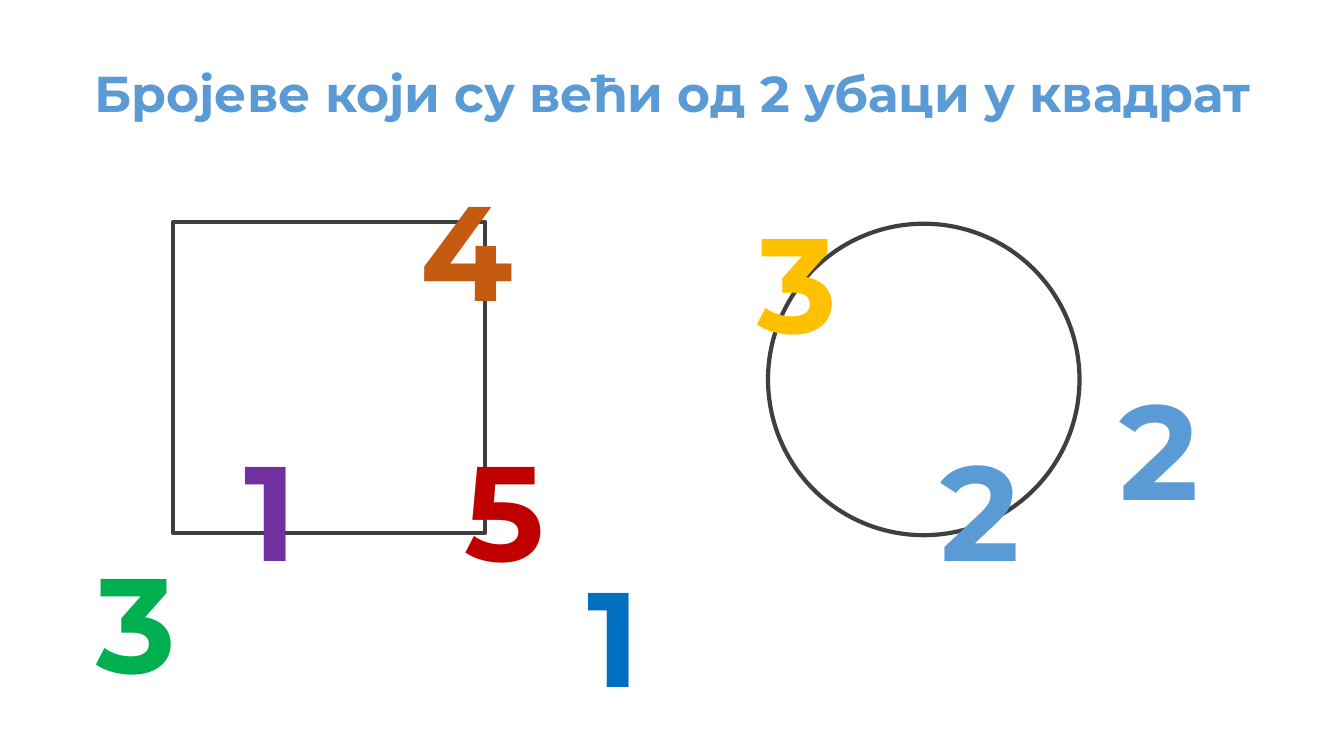
from dataclasses import dataclass

import pptx
import pptx.dml.color
import pptx.enum.shapes
import pptx.enum.text
import pptx.slide
import pptx.util

FONT = "Montserrat"
BLUE = "5B9BD5"
OUTLINE = "3F3F3F"
TARGET_SIZE = 222.5
DIGIT_WIDTH, DIGIT_HEIGHT = 79.2, 123.8
LOWER_ROW = 301.7


@dataclass(frozen=True)
class Target:
    kind: pptx.enum.shapes.MSO_SHAPE
    left: float
    top: float


@dataclass(frozen=True)
class Label:
    text: str
    left: float
    top: float
    color: str
    width: float = DIGIT_WIDTH
    height: float = DIGIT_HEIGHT
    size: float = 96


TARGETS = [
    Target(pptx.enum.shapes.MSO_SHAPE.RECTANGLE, 158.4 - 34.6, 158.4),
    Target(pptx.enum.shapes.MSO_SHAPE.OVAL, 548.6, 159.8),
]

TASK = Label("Бројеве који су већи од 2 убаци у квадрат", 41.8, 41, BLUE, 877, 51.1, 36)

DIGITS = [
    Label("5", 321.1, LOWER_ROW, "C00000"),
    Label("3", 57.6, 381.6, "00B050"),
    Label("2", 788.4, 257.8, BLUE),
    Label("1", 398.9, 391.7, "0070C0"),
    Label("4", 293, 115.9, "C55A11"),
    Label("2", 660.2, LOWER_ROW, BLUE),
    Label("3", 529.9, 139, "FFC000"),
    Label("1", 154.1, LOWER_ROW, "7030A0"),
]


def rgb(color: str) -> pptx.dml.color.RGBColor:
    return pptx.dml.color.RGBColor.from_string(color)


def draw_target(slide: pptx.slide.Slide, target: Target) -> None:
    outline = slide.shapes.add_shape(
        target.kind,
        pptx.util.Pt(target.left),
        pptx.util.Pt(target.top),
        pptx.util.Pt(TARGET_SIZE),
        pptx.util.Pt(TARGET_SIZE),
    )
    outline.shadow.inherit = False
    outline.fill.background()
    outline.line.color.rgb = rgb(OUTLINE)
    outline.line.width = pptx.util.Pt(3)


def draw_label(slide: pptx.slide.Slide, label: Label) -> None:
    frame = slide.shapes.add_textbox(
        pptx.util.Pt(label.left),
        pptx.util.Pt(label.top),
        pptx.util.Pt(label.width),
        pptx.util.Pt(label.height),
    ).text_frame
    frame.word_wrap = True
    frame.auto_size = pptx.enum.text.MSO_AUTO_SIZE.SHAPE_TO_FIT_TEXT
    paragraph = frame.paragraphs[0]
    paragraph.alignment = pptx.enum.text.PP_ALIGN.CENTER
    run = paragraph.add_run()
    run.text = label.text
    run.font.name = FONT
    run.font.size = pptx.util.Pt(label.size)
    run.font.bold = True
    run.font.color.rgb = rgb(label.color)


def main() -> None:
    deck = pptx.Presentation()
    deck.slide_width = pptx.util.Pt(960)
    deck.slide_height = pptx.util.Pt(540)
    slide = deck.slides.add_slide(deck.slide_layouts[6])
    square, circle = TARGETS
    draw_target(slide, square)
    draw_label(slide, TASK)
    draw_target(slide, circle)
    for digit in DIGITS:
        draw_label(slide, digit)
    deck.save("out.pptx")


if __name__ == "__main__":
    main()
